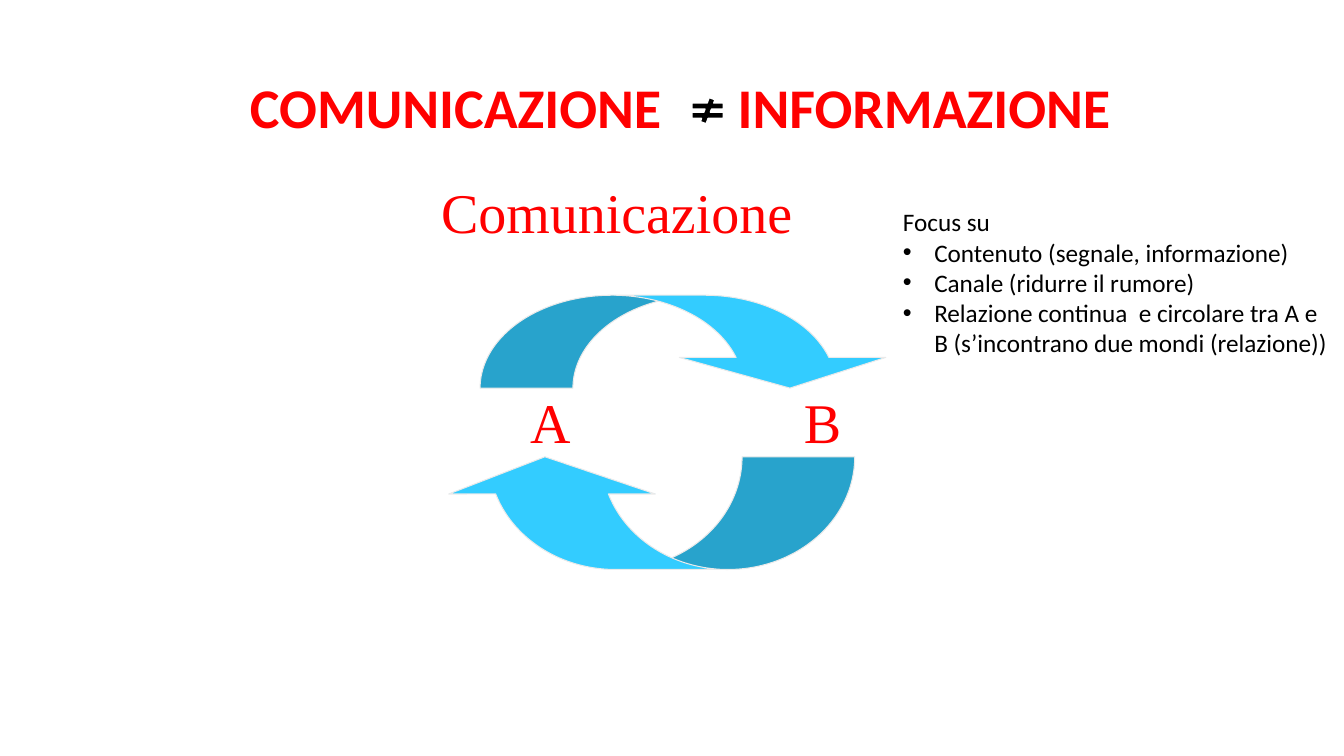
from lxml import etree
from pptx import Presentation
from pptx.dml.color import RGBColor
from pptx.enum.shapes import MSO_SHAPE
from pptx.enum.text import MSO_ANCHOR, MSO_AUTO_SIZE, PP_ALIGN
from pptx.oxml.ns import qn
from pptx.util import Cm, Pt

RED = RGBColor(0xFF, 0x00, 0x00)
BLACK = RGBColor(0x00, 0x00, 0x00)
WHITE = RGBColor(0xFF, 0xFF, 0xFF)
SKY = RGBColor(0x33, 0xCC, 0xFF)
PALE_GREY = RGBColor(0xEA, 0xEA, 0xEA)
SANS, SERIF = "Calibri", "Times New Roman"
CURVED_ARROW = MSO_SHAPE.CURVED_DOWN_ARROW
NOT_EQUAL = MSO_SHAPE.MATH_NOT_EQUAL
MIDDLE, TOP = MSO_ANCHOR.MIDDLE, MSO_ANCHOR.TOP
LEFT, CENTER = PP_ALIGN.LEFT, PP_ALIGN.CENTER
NO_AUTOFIT = MSO_AUTO_SIZE.NONE

FOCUS_HEADING = "Focus su"
FOCUS_POINTS = [
    "Contenuto (segnale, informazione)",
    "Canale (ridurre il rumore)",
    "Relazione continua  e circolare tra A e B (s’incontrano due mondi (relazione))",
]


def place(shape, box):
    shape.left, shape.top, shape.width, shape.height = (Cm(length) for length in box)


def add_span(para, text, size, font, color, bold=False):
    span = para.add_run()
    span.text = text
    span.font.size = Pt(size)
    span.font.name = font
    span.font.color.rgb = color
    span.font.bold = bold


def add_preset(page, kind, box, fill, line, line_width):
    shape = page.shapes.add_shape(kind, *(Cm(length) for length in box))
    shape.shadow.inherit = False
    shape.fill.solid()
    shape.fill.fore_color.rgb = fill
    shape.line.color.rgb = line
    shape.line.width = Pt(line_width)
    return shape


def add_label(page, text, box):
    """Large red serif text, centred in its box."""
    frame = page.shapes.add_textbox(*(Cm(length) for length in box)).text_frame
    frame.word_wrap = True
    frame.vertical_anchor = MIDDLE
    para = frame.paragraphs[0]
    para.alignment = CENTER
    add_span(para, text, 40, SERIF, RED)


def set_bullet(para, indent):
    props = para._p.get_or_add_pPr()
    props.set("marL", str(indent))
    props.set("indent", str(-indent))
    if indent:
        etree.SubElement(props, qn("a:buFont")).set("typeface", "Arial")
        etree.SubElement(props, qn("a:buChar")).set("char", "•")
    else:
        etree.SubElement(props, qn("a:buNone"))


def build_title(page, box):
    """Two words kept apart by a tab stop, with the sign in the gap."""
    left, top = box[:2]
    title = page.shapes.title
    place(title, box)
    frame = title.text_frame
    frame.auto_size = NO_AUTOFIT
    frame.vertical_anchor = MIDDLE
    frame.margin_left = Cm(0.76)
    para = frame.paragraphs[0]
    stops = etree.SubElement(para._p.get_or_add_pPr(), qn("a:tabLst"))
    stop = etree.SubElement(stops, qn("a:tab"))
    stop.set("pos", str(Cm(12.29)))
    stop.set("algn", "l")
    para.alignment = LEFT
    para.line_spacing = 0.9
    add_span(para, "COMUNICAZIONE\t", 40, SANS, RED, True)
    add_span(para, "INFORMAZIONE", 40, SANS, RED, True)
    add_preset(page, NOT_EQUAL, (left + 11.76, top + 1.24, 1.07, 0.66), BLACK, WHITE, 1)


def build_cycle(page, box):
    """Two curved arrows that circle between A and B."""
    left, top, width, height = box
    arrow_width = 10.41
    arrows = [
        (left + width - arrow_width, top, 2.34, 0),
        (left, top + height - 2.84, 2.84, 180),
    ]
    for x, y, arrow_height, rotation in arrows:
        arrow = add_preset(page, CURVED_ARROW, (x, y, arrow_width, arrow_height),
                           SKY, PALE_GREY, 0.75)
        arrow.rotation = rotation
        for index, value in enumerate((2.02, 4.14, 0.33)):
            arrow.adjustments[index] = value
    # Parties, centred between the arrows
    for name, center in (("A", 2.84), ("B", 9.7)):
        add_label(page, name, (left + center - 1.1, top + 2.23, 2, 1.9))


def build_focus(page, box):
    """Heading and bullet list."""
    body = page.placeholders[1]
    place(body, box)
    frame = body.text_frame
    frame.word_wrap = True
    frame.auto_size = NO_AUTOFIT
    frame.vertical_anchor = TOP
    for number, text in enumerate([FOCUS_HEADING] + FOCUS_POINTS):
        para = frame.add_paragraph() if number else frame.paragraphs[0]
        set_bullet(para, Cm(0.79) if number else 0)
        para.space_before = Pt(0)
        add_span(para, text, 18, SANS, BLACK)


def main():
    deck = Presentation()
    deck.slide_width, deck.slide_height = Cm(33.87), Cm(19.05)
    page = deck.slides.add_slide(deck.slide_layouts[1])
    build_title(page, (5.54, 1.22, 23.22, 3.12))
    build_cycle(page, (11.13, 7.44, 11.38, 6.91))
    add_label(page, "Comunicazione", (10.13, 4.09, 10.82, 2.46))
    build_focus(page, (22.5, 5.08, 11.37, 5.64))
    deck.save("out.pptx")


if __name__ == "__main__":
    main()
